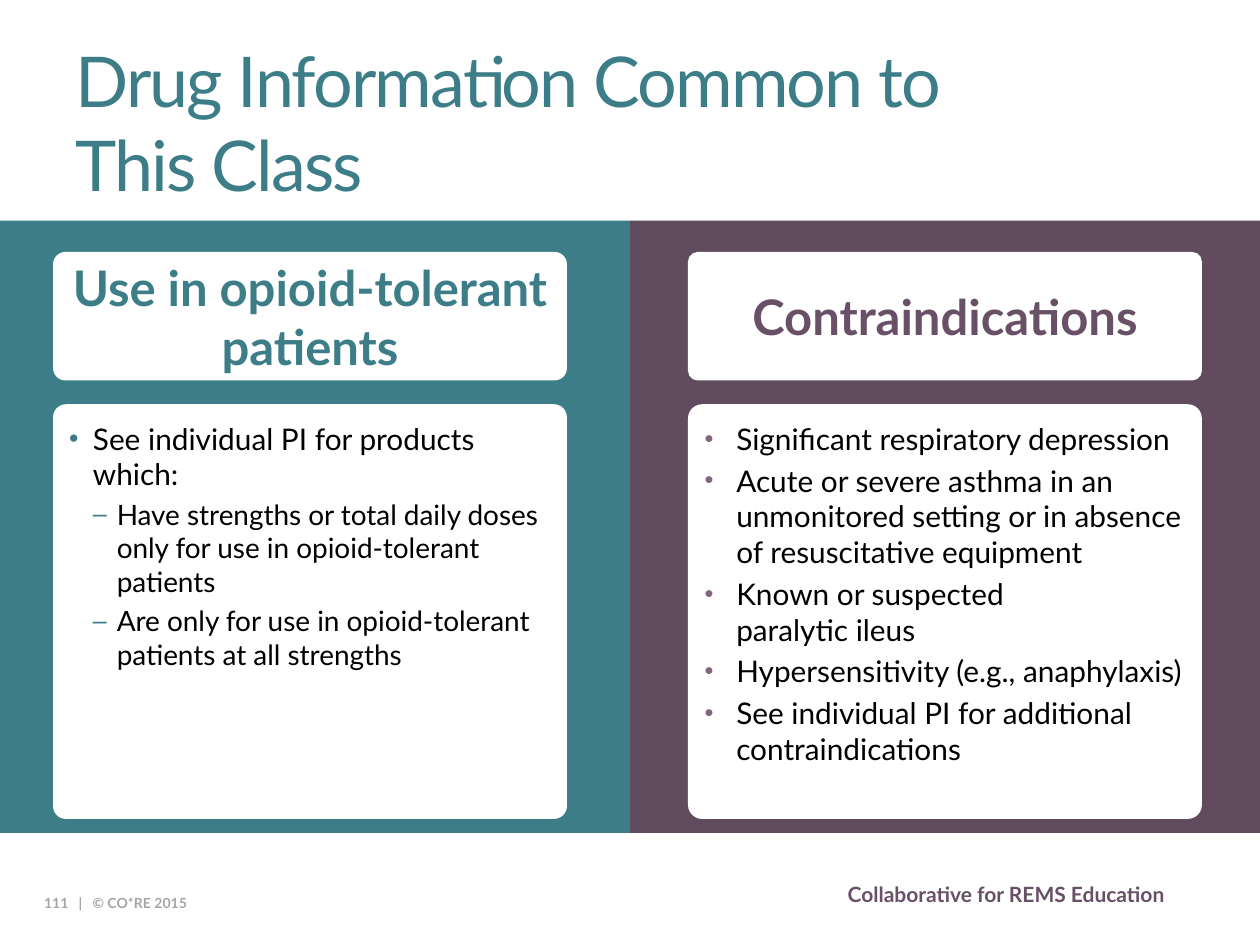
from lxml import etree
from pptx import Presentation
from pptx import util as u
from pptx.dml.color import RGBColor
from pptx.enum import shapes, text
from pptx.oxml.ns import qn

FONT = "Lato"
TEAL, PLUM, INK = "3C7D88", "685066", "000000"
RECT = shapes.MSO_SHAPE.RECTANGLE
ROUND = shapes.MSO_SHAPE.ROUNDED_RECTANGLE
MID = text.MSO_ANCHOR.MIDDLE

# Body lines: (words, size, left indent in cm, bullet)
USES = [
    ("See individual PI for products which:", 17, 0.48, "•"),
    ("Have strengths or total daily doses only for use in "
     "opioid-tolerant patients", 16, 0.96, "–"),
    ("Are only for use in opioid-tolerant patients at all strengths",
     16, 0.96, "–"),
]
RISKS = [(line, 17, 0.64, "•") for line in (
    "Significant respiratory depression",
    "Acute or severe asthma in an unmonitored setting or in absence "
    "of resuscitative equipment",
    "Known or suspected \vparalytic ileus",
    "Hypersensitivity (e.g., anaphylaxis)",
    "See individual PI for additional contraindications",
)]


def color(code):
    return RGBColor.from_string(code)


def block(slide, kind, box, fill, adj=None):
    """Add a plain filled shape; box is left, top, width, height in cm."""
    shape = slide.shapes.add_shape(kind, *map(u.Cm, box))
    shape.shadow.inherit = False
    shape.fill.solid()
    shape.fill.fore_color.rgb = color(fill)
    shape.line.fill.background()
    if adj is not None:
        shape.adjustments[0] = adj
    return shape


def write(para, words, size=17, ink=INK, bold=False, align=None, track=None):
    """Fill a paragraph with text in one format."""
    para.text = words
    para.alignment = align or text.PP_ALIGN.LEFT
    for run in para.runs:
        font = run.font
        font.name, font.size, font.bold = FONT, u.Pt(size), bold
        font.color.rgb = color(ink)
        if track is not None:
            run._r.get_or_add_rPr().set("spc", str(track))


def label(slide, box, words, anchor=text.MSO_ANCHOR.TOP, wrap=True, **form):
    frame = slide.shapes.add_textbox(*map(u.Cm, box)).text_frame
    frame.word_wrap = wrap
    frame.vertical_anchor = anchor
    write(frame.paragraphs[0], words, **form)


def bullet(para, mark, ink, scale, left, hang):
    props = para._p.get_or_add_pPr()
    props.set("marL", str(u.Cm(left)))
    props.set("indent", str(-u.Cm(hang)))
    tint = etree.SubElement(props, qn("a:buClr"))
    etree.SubElement(tint, qn("a:srgbClr"), val=ink)
    etree.SubElement(props, qn("a:buSzPct"), val=str(scale * 1000))
    etree.SubElement(props, qn("a:buFont"), typeface="Arial")
    etree.SubElement(props, qn("a:buChar"), char=mark)


def head(slide, left, words, ink, adj):
    card = block(slide, ROUND, (left, 5.08, 10.36, 2.59), "FFFFFF", adj)
    frame = card.text_frame
    frame.word_wrap = True
    frame.vertical_anchor = MID
    write(frame.paragraphs[0], words, size=28, ink=ink, bold=True,
          align=text.PP_ALIGN.CENTER)


def body(slide, left, lines, ink, scale, adj):
    card = block(slide, ROUND, (left, 8.15, 10.36, 8.36), "FFFFFF", adj)
    frame = card.text_frame
    frame.word_wrap = True
    frame.vertical_anchor = text.MSO_ANCHOR.TOP
    frame.margin_top, frame.margin_bottom = u.Cm(0.25), 0
    hang = lines[0][2]
    for i, (words, size, inset, mark) in enumerate(lines):
        para = frame.add_paragraph() if i else frame.paragraphs[0]
        bullet(para, mark, ink, scale, inset, hang)
        write(para, words, size=size)
        para.space_before = u.Pt(size * 0.2 if i else 0)


def main():
    deck = Presentation()
    deck.slide_width, deck.slide_height = u.Cm(25.4), u.Cm(19.05)
    slide = deck.slides.add_slide(deck.slide_layouts[6])

    # Two colour halves
    for left, fill in ((12.7, "614B5F"), (0, TEAL)):
        block(slide, RECT, (left, 4.45, 12.7, 12.34), fill)

    # Title
    label(slide, (1.27, 0.64, 22.86, 2.74),
          "Drug Information Common to \vThis Class",
          size=40, ink=TEAL, track=-100)

    # Cards
    head(slide, 1.07, "Use in opioid-tolerant patients", TEAL, 0.095)
    head(slide, 13.87, "Contraindications", PLUM, 0.075)
    body(slide, 1.07, USES, TEAL, 90, 0.031)
    body(slide, 13.87, RISKS, "836581", 85, 0.034)

    # Footer
    label(slide, (0.64, 17.88, 4.45, 0.66), "111   |   © CO*RE 2015",
          anchor=MID, size=8, ink="A6A6A6", bold=True)
    label(slide, (16.84, 17.65, 7.29, 0.76),
          "Collaborative for REMS Education",
          wrap=False, size=12, ink=PLUM, bold=True)

    deck.save("out.pptx")


if __name__ == "__main__":
    main()
